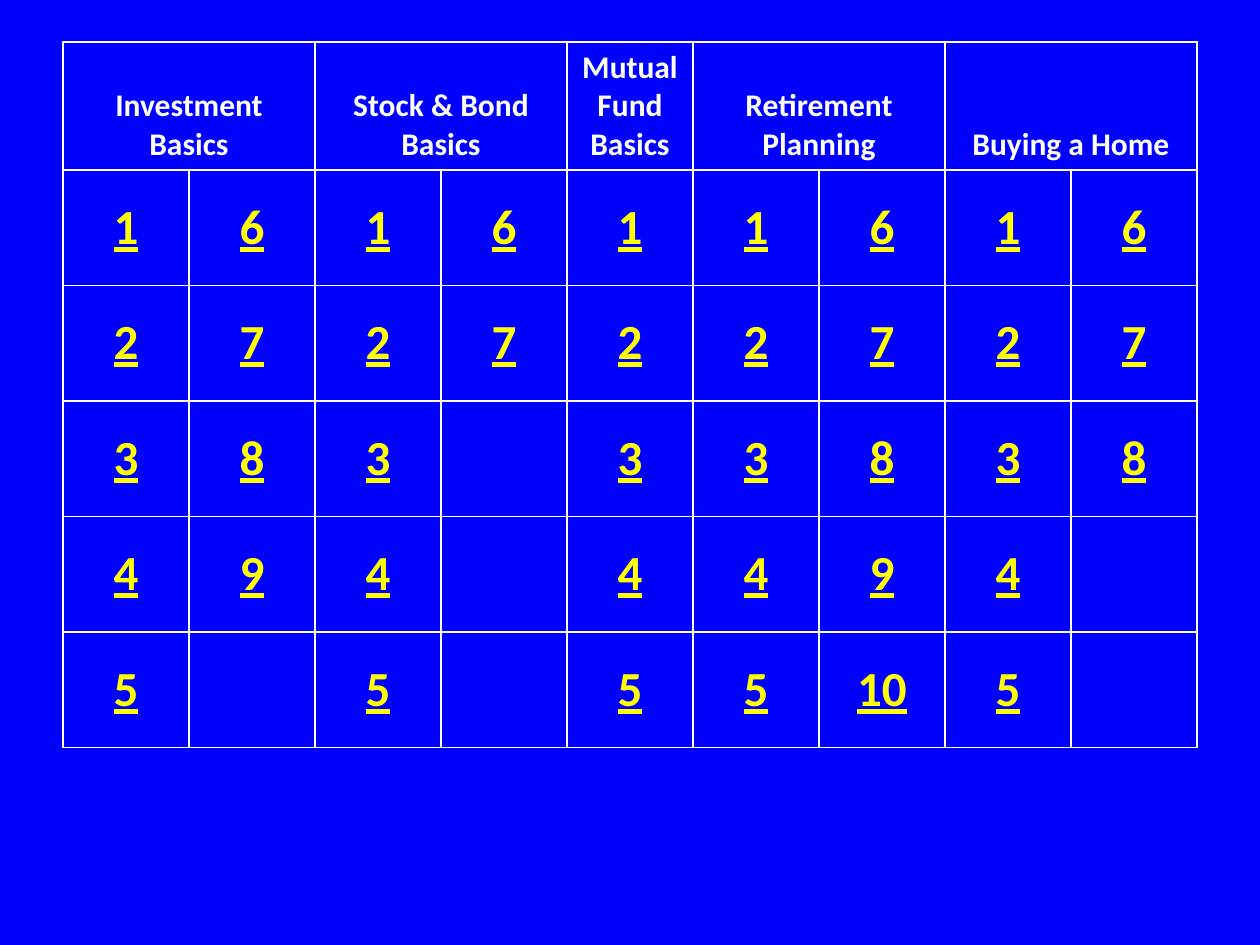
from math import ceil

from lxml.etree import SubElement
from pptx import Presentation
from pptx.dml.color import RGBColor
from pptx.enum.text import MSO_ANCHOR as Anchor, PP_ALIGN as Align
from pptx.oxml.ns import qn
from pptx.util import Pt

COLORS = {"background": "0000FF", "heading": "FFFFFF", "question": "FFFF00", "border": "FFFFFF"}
FONT = "Calibri"
QUESTION_ROWS = 5
CELL_WIDTH, CELL_HEIGHT = 72, 66

# Heading and number of questions of each category
CATEGORIES = [
    ("Investment\nBasics", 9),
    ("Stock & Bond\nBasics", 7),
    ("Mutual Fund Basics", 5),
    ("Retirement\nPlanning", 10),
    ("Buying a Home", 8),
]


class Board:
    def __init__(self, presentation):
        self.slide = presentation.slides.add_slide(presentation.slide_layouts[6])
        fill = self.slide.background.fill
        fill.solid()
        fill.fore_color.rgb = RGBColor.from_string(COLORS["background"])

    def add_grid(self, left, top, rows, columns):
        """Add an unfilled table with equal cells and thin borders."""
        frame = self.slide.shapes.add_table(
            rows, columns, Pt(left), Pt(top),
            Pt(columns * CELL_WIDTH), Pt(rows * CELL_HEIGHT))
        table = frame.table
        table.first_row = table.horz_banding = False
        for cell in table.iter_cells():
            self.add_borders(cell)
            cell.fill.background()
        return table

    def add_borders(self, cell):
        properties = cell._tc.get_or_add_tcPr()
        for side in ("lnL", "lnR", "lnT", "lnB"):
            line = SubElement(properties, qn(f"a:{side}"), w=str(Pt(1)))
            fill = SubElement(line, qn("a:solidFill"))
            SubElement(fill, qn("a:srgbClr"), val=COLORS["border"])

    def set_cell_text(self, cell, text, size, color, anchor, underline=False):
        cell.text = text
        cell.vertical_anchor = anchor
        for paragraph in cell.text_frame.paragraphs:
            paragraph.alignment = Align.CENTER
            font = paragraph.font
            font.name, font.size, font.bold = FONT, Pt(size), True
            font.underline = underline
            font.color.rgb = RGBColor.from_string(COLORS[color])

    def add_category(self, table, column, heading, count):
        """Fill the category's columns downwards and return the next free column."""
        width = ceil(count / QUESTION_ROWS)
        heading_cell = table.cell(0, column)
        if width > 1:
            heading_cell.merge(table.cell(0, column + width - 1))
        self.set_cell_text(heading_cell, heading, 18, "heading", Anchor.BOTTOM)
        for index in range(count):
            offset, row = divmod(index, QUESTION_ROWS)
            self.set_cell_text(table.cell(row + 1, column + offset), str(index + 1),
                               28, "question", Anchor.MIDDLE, underline=True)
        return column + width


def main():
    presentation = Presentation()
    presentation.slide_width, presentation.slide_height = Pt(720), Pt(540)
    board = Board(presentation)
    columns = sum(ceil(count / QUESTION_ROWS) for _, count in CATEGORIES)
    table = board.add_grid(36, 24, QUESTION_ROWS + 1, columns)
    column = 0
    for heading, count in CATEGORIES:
        column = board.add_category(table, column, heading, count)
    presentation.save("out.pptx")


if __name__ == "__main__":
    main()
